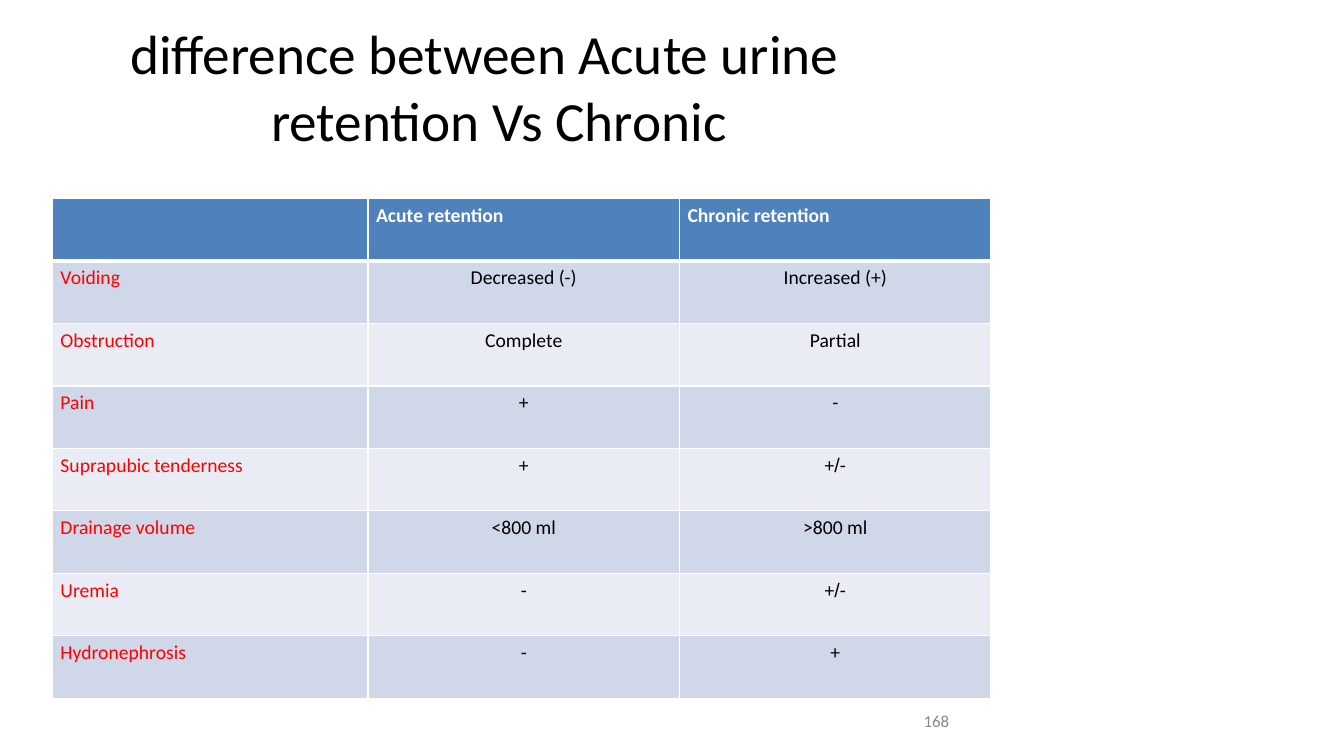
from lxml import etree
from pptx import Presentation
from pptx.dml.color import RGBColor
from pptx.enum.text import MSO_ANCHOR as Anchor, MSO_AUTO_SIZE as AutoSize, PP_ALIGN as Align
from pptx.oxml.ns import qn
from pptx.util import Inches, Pt

BLACK = RGBColor(0x00, 0x00, 0x00)
WHITE = RGBColor(0xFF, 0xFF, 0xFF)
RED = RGBColor(0xFF, 0x00, 0x00)
GREY = RGBColor(0x88, 0x88, 0x88)
HEADER_BLUE = RGBColor(0x4F, 0x81, 0xBC)
BAND_DARK = RGBColor(0xD0, 0xD7, 0xE8)
BAND_LIGHT = RGBColor(0xE9, 0xEC, 0xF4)

ROWS = [
    ("", "Acute retention", "Chronic retention"),
    ("Voiding", "Decreased (-)", "Increased (+)"),
    ("Obstruction", "Complete", "Partial"),
    ("Pain", "+", "-"),
    ("Suprapubic tenderness", "+", "+/-"),
    ("Drainage volume", "<800 ml", ">800 ml"),
    ("Uremia", "-", "+/-"),
    ("Hydronephrosis", "-", "+"),
]
COLUMN_WIDTHS = (3.13, 3.09, 3.09)
ROW_HEIGHT = 0.62


def style(span, size, color, bold=False, name="Calibri"):
    span.font.name = name
    span.font.size = Pt(size)
    span.font.bold = bold
    span.font.color.rgb = color


def set_frame(frame):
    frame.margin_left = frame.margin_top = frame.margin_right = frame.margin_bottom = 0
    frame.word_wrap = True
    frame.auto_size = AutoSize.NONE
    frame.vertical_anchor = Anchor.TOP


def add_title(page):
    title = page.shapes.title
    title.left, title.top = Inches(1.27), Inches(0.16)
    title.width, title.height = Inches(7.15), Inches(1.36)
    frame = title.text_frame
    frame.text = "difference between Acute urine retention Vs Chronic"
    set_frame(frame)
    frame.margin_top = Inches(0.02)
    para = frame.paragraphs[0]
    para.alignment = Align.LEFT
    para.line_spacing = 1.01
    # Hanging indent puts the wrapped line under the middle of the first
    properties = para._p.get_or_add_pPr()
    properties.set("marL", str(Inches(1.42)))
    properties.set("indent", str(Inches(-1.4)))
    style(para.runs[0], 39.5, BLACK)


def add_page_number(page):
    box = page.shapes.add_textbox(Inches(9.16), Inches(7.08), Inches(0.49), Inches(0.19))
    frame = box.text_frame
    frame.text = "168"
    set_frame(frame)
    para = frame.paragraphs[0]
    para.line_spacing = Pt(12.4)
    style(para.runs[0], 12, GREY)


def set_borders(cell, widths):
    properties = cell._tc.get_or_add_tcPr()
    for side, width in widths.items():
        line = etree.SubElement(properties, qn(f"a:{side}"), w=str(Pt(width)))
        fill = etree.SubElement(line, qn("a:solidFill"))
        etree.SubElement(fill, qn("a:srgbClr"), val=str(WHITE))


def fill_cell(cell, text, row, column):
    header = row == 0
    set_borders(cell, {"lnL": 1, "lnR": 1, "lnT": 3 if row == 1 else 1, "lnB": 3 if header else 1})
    cell.fill.solid()
    cell.fill.fore_color.rgb = HEADER_BLUE if header else BAND_DARK if row % 2 else BAND_LIGHT
    centred = column > 0 and not header
    cell.margin_left = 0 if centred else Inches(0.08)
    cell.margin_right = cell.margin_bottom = 0
    cell.margin_top = Inches(0.05)
    cell.vertical_anchor = Anchor.TOP
    para = cell.text_frame.paragraphs[0]
    para.alignment = Align.CENTER if centred else Align.LEFT
    color = WHITE if header else BLACK if centred else RED
    # The slash in "+/-" is set in Arial
    for piece in text.partition("/"):
        if piece:
            span = para.add_run()
            span.text = piece
            style(span, 14, color, header, "Arial" if piece == "/" else "Calibri")


def add_comparison_table(page):
    table = page.shapes.add_table(
        len(ROWS), len(COLUMN_WIDTHS), Inches(0.52), Inches(1.97),
        Inches(sum(COLUMN_WIDTHS)), Inches(ROW_HEIGHT * len(ROWS))).table
    for column, width in zip(table.columns, COLUMN_WIDTHS):
        column.width = Inches(width)
    for row, texts in enumerate(ROWS):
        table.rows[row].height = Inches(ROW_HEIGHT)
        for column, text in enumerate(texts):
            fill_cell(table.cell(row, column), text, row, column)


def main():
    deck = Presentation()
    deck.slide_width, deck.slide_height = Inches(13.33), Inches(7.5)
    page = deck.slides.add_slide(deck.slide_layouts[5])
    add_page_number(page)
    add_title(page)
    add_comparison_table(page)
    deck.save("out.pptx")


if __name__ == "__main__":
    main()
